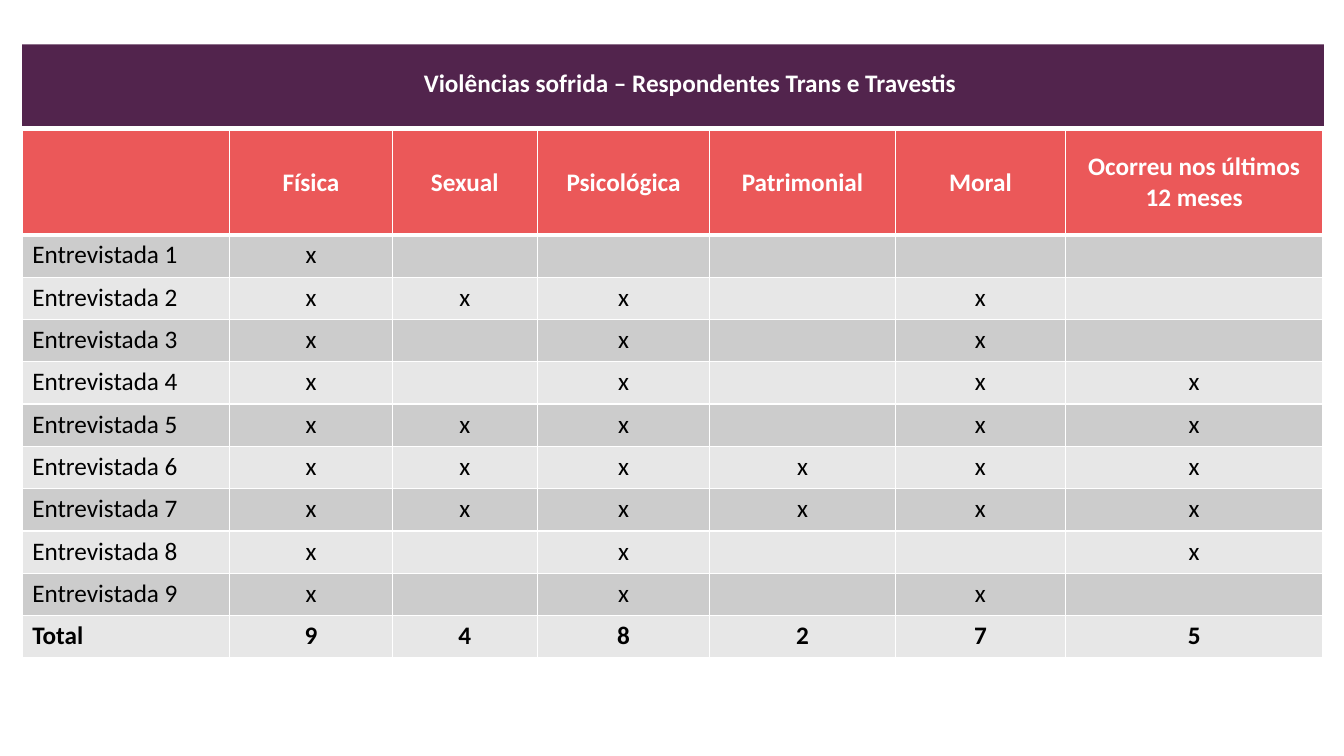
import pptx
import pptx.dml.color
import pptx.enum.shapes
import pptx.enum.text
import pptx.oxml
import pptx.oxml.ns
import pptx.util
from pptx.dml.color import RGBColor
from pptx.util import Inches

PURPLE = RGBColor(0x52, 0x24, 0x4D)
CORAL = RGBColor(0xEB, 0x58, 0x59)
DARK_GREY = RGBColor(0xCC, 0xCC, 0xCC)
LIGHT_GREY = RGBColor(0xE7, 0xE7, 0xE7)
WHITE = RGBColor(0xFF, 0xFF, 0xFF)
BLACK = RGBColor(0x00, 0x00, 0x00)

TITLE = "Violências sofrida – Respondentes Trans e Travestis"
HEADERS = ["", "Física", "Sexual", "Psicológica", "Patrimonial", "Moral",
           "Ocorreu nos últimos 12 meses"]
MARKS = ["x-----", "xxx-x-", "x-x-x-", "x-x-xx", "xxx-xx",
         "xxxxxx", "xxxxxx", "x-x--x", "x-x-x-"]
COLUMN_WIDTHS = [2.06, 1.61, 1.44, 1.71, 1.84, 1.69, 2.55]
HEADER_HEIGHT = 1.04
ROW_HEIGHT = 0.42


def format_paragraph(paragraph, color, bold, alignment):
    """Align a paragraph and style its runs."""
    paragraph.alignment = alignment
    for run in paragraph.runs:
        run.font.name = "Calibri"
        run.font.size = pptx.util.Pt(18)
        run.font.bold = bold
        run.font.color.rgb = color


def set_borders(cell, top, bottom):
    """Draw white cell borders with the given top and bottom widths in points."""
    properties = cell._tc.get_or_add_tcPr()
    for side, width in (("L", 1), ("R", 1), ("T", top), ("B", bottom)):
        properties.append(pptx.oxml.parse_xml(
            f'<a:ln{side} {pptx.oxml.ns.nsdecls("a")} w="{pptx.util.Pt(width)}">'
            f'<a:solidFill><a:srgbClr val="{WHITE}"/></a:solidFill></a:ln{side}>'))


def add_banner(slide, left, top, width, height):
    """Draw the purple band and place the title on it."""
    banner = slide.shapes.add_shape(
        pptx.enum.shapes.MSO_SHAPE.RECTANGLE,
        Inches(left), Inches(top), Inches(width), Inches(height))
    banner.shadow.inherit = False
    banner.fill.solid()
    banner.fill.fore_color.rgb = PURPLE
    banner.line.fill.background()

    title = slide.shapes.title
    banner._element.addnext(title._element)
    title.left, title.top = Inches(left + 0.34), Inches(top + 0.18)
    title.width, title.height = Inches(width - 0.34), Inches(0.4)
    text_frame = title.text_frame
    text_frame.text = TITLE
    text_frame.word_wrap = True
    text_frame.auto_size = pptx.enum.text.MSO_AUTO_SIZE.NONE
    text_frame.vertical_anchor = pptx.enum.text.MSO_ANCHOR.TOP
    format_paragraph(text_frame.paragraphs[0], WHITE, True,
                     pptx.enum.text.PP_ALIGN.CENTER)


def add_violence_table(slide, left, top, width):
    """Build the table of violence types per respondent, with totals."""
    rows = [HEADERS]
    for number, marks in enumerate(MARKS, start=1):
        rows.append([f"Entrevistada {number}", *marks.replace("-", " ")])
    rows.append(["Total", *(str(column.count("x")) for column in zip(*MARKS))])
    last_row = len(rows) - 1

    height = HEADER_HEIGHT + ROW_HEIGHT * last_row
    table = slide.shapes.add_table(
        len(rows), len(HEADERS),
        Inches(left), Inches(top), Inches(width), Inches(height)).table
    for column, column_width in zip(table.columns, COLUMN_WIDTHS):
        column.width = Inches(column_width)

    for row_index, texts in enumerate(rows):
        is_header = row_index == 0
        table.rows[row_index].height = Inches(
            HEADER_HEIGHT if is_header else ROW_HEIGHT)
        band = DARK_GREY if row_index % 2 else LIGHT_GREY
        for column_index, text in enumerate(texts):
            cell = table.cell(row_index, column_index)
            set_borders(cell, 3 if row_index == 1 else 1, 3 if is_header else 1)
            cell.fill.solid()
            cell.fill.fore_color.rgb = CORAL if is_header else band
            if is_header:
                cell.vertical_anchor = pptx.enum.text.MSO_ANCHOR.MIDDLE
            cell.text_frame.text = text.strip()
            alignment = (pptx.enum.text.PP_ALIGN.CENTER if column_index
                         else pptx.enum.text.PP_ALIGN.LEFT)
            format_paragraph(cell.text_frame.paragraphs[0],
                             WHITE if is_header else BLACK,
                             row_index in (0, last_row), alignment)


def main():
    """Create the presentation with its single table slide."""
    presentation = pptx.Presentation()
    presentation.slide_width = Inches(13.33)
    presentation.slide_height = Inches(7.5)
    slide = presentation.slides.add_slide(presentation.slide_layouts[5])
    add_banner(slide, 0.22, 0.44, 12.91, 0.81)
    add_violence_table(slide, 0.22, 1.29, 12.91)
    presentation.save("out.pptx")


if __name__ == "__main__":
    main()
